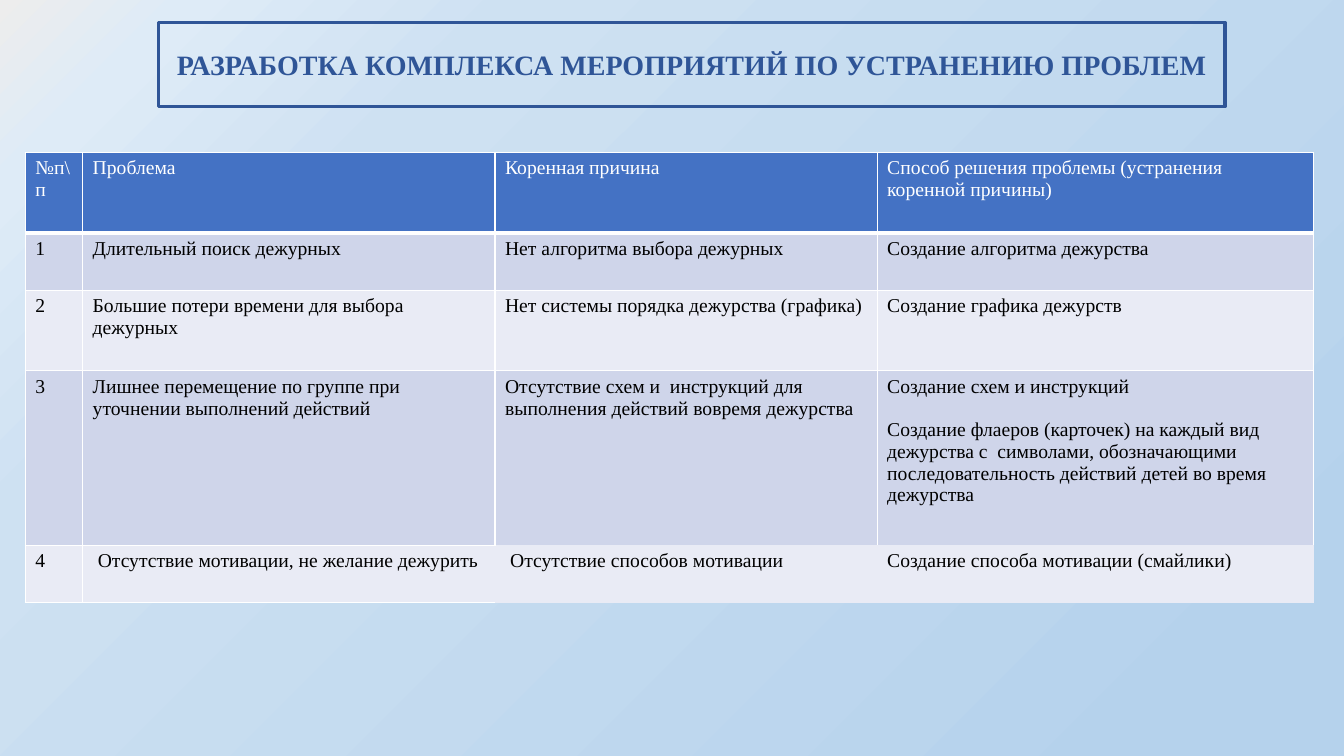
from lxml.etree import SubElement
from pptx import Presentation
from pptx.dml.color import RGBColor
from pptx.enum.text import MSO_ANCHOR, MSO_AUTO_SIZE, PP_ALIGN
from pptx.oxml.ns import qn
from pptx.util import Inches, Pt

FONT = "Times New Roman"
COLORS = {
    "title": "2F5597",
    "header": "4472C4",
    "odd_row": "CFD5EA",
    "even_row": "E9EBF5",
    "white": "FFFFFF",
    "text": "000000",
}
BACKGROUND_STOPS = [(0, "EDEDED"), (9, "DEEBF7"), (25, "CEE1F2"), (91, "B5D2EC")]
COLUMN_WIDTHS = [0.57, 4.09, 3.79, 4.33]
ROW_HEIGHTS = [0.8, 0.57, 0.8, 1.73, 0.57]
MEASURES = [
    ["№п\\п", "Проблема", "Коренная причина",
     "Способ решения проблемы (устранения коренной причины)"],
    ["1", "Длительный поиск дежурных", "Нет алгоритма выбора дежурных",
     "Создание алгоритма дежурства"],
    ["2", "Большие потери времени для выбора дежурных",
     "Нет системы порядка дежурства (графика)", "Создание графика дежурств"],
    ["3", "Лишнее перемещение по группе при уточнении выполнений действий",
     "Отсутствие схем и  инструкций для выполнения действий вовремя дежурства",
     "Создание схем и инструкций\n"
     "Создание флаеров (карточек) на каждый вид дежурства с  символами, обозначающими\n"
     "последовательность действий детей во время дежурства"],
    ["4", "Отсутствие мотивации, не желание дежурить",
     "Отсутствие способов мотивации", "Создание способа мотивации (смайлики)"],
]
BORDERLESS_SIDES = {
    (3, 2): "B", (3, 3): "B", (4, 1): "R", (4, 2): "LRTB", (4, 3): "LRTB",
}
INDENTED_CELLS = {(4, 1), (4, 2)}


def add_text(paragraph, text, size, color, bold=False):
    run = paragraph.add_run()
    run.text = text
    run.font.name = FONT
    run.font.size = Pt(size)
    run.font.bold = bold
    run.font.color.rgb = RGBColor.from_string(color)


def paint_background(slide):
    fill = slide.background.fill
    fill.gradient()
    gradient = slide.background._cSld.find(".//" + qn("a:gradFill"))
    stops = gradient.find(qn("a:gsLst"))
    for stop in list(stops):
        stops.remove(stop)
    for position, color in BACKGROUND_STOPS:
        stop = SubElement(stops, qn("a:gs"), pos=str(position * 1000))
        SubElement(stop, qn("a:srgbClr"), val=color)
    gradient.find(qn("a:lin")).set("ang", str(45 * 60000))


def place_title(slide, left, top, width, height):
    title = slide.shapes.title
    title.left, title.top = Inches(left), Inches(top)
    title.width, title.height = Inches(width), Inches(height)
    title.line.color.rgb = RGBColor.from_string(COLORS["title"])
    title.line.width = Pt(2.25)
    frame = title.text_frame
    frame.word_wrap = True
    frame.auto_size = MSO_AUTO_SIZE.SHAPE_TO_FIT_TEXT
    frame.vertical_anchor = MSO_ANCHOR.MIDDLE
    heading = frame.paragraphs[0]
    heading.alignment = PP_ALIGN.CENTER
    add_text(heading, "РАЗРАБОТКА КОМПЛЕКСА МЕРОПРИЯТИЙ ПО УСТРАНЕНИЮ ПРОБЛЕМ",
             20, COLORS["title"], bold=True)


def set_borders(cell, row, column):
    properties = cell._tc.get_or_add_tcPr()
    for side in "LRTB":
        heavy = (row, side) in ((0, "B"), (1, "T"))
        border = SubElement(properties, qn(f"a:ln{side}"), w=str(Pt(3 if heavy else 1)))
        if side in BORDERLESS_SIDES.get((row, column), ""):
            SubElement(border, qn("a:noFill"))
        else:
            line_fill = SubElement(border, qn("a:solidFill"))
            SubElement(line_fill, qn("a:srgbClr"), val=COLORS["white"])


def fill_cell(cell, row, column, text):
    set_borders(cell, row, column)
    band = "header" if row == 0 else "odd_row" if row % 2 else "even_row"
    cell.fill.solid()
    cell.fill.fore_color.rgb = RGBColor.from_string(COLORS[band])
    if (row, column) in INDENTED_CELLS:
        cell.margin_left = Inches(0.15)
    for index, line in enumerate(text.split("\n")):
        frame = cell.text_frame
        paragraph = frame.add_paragraph() if index else frame.paragraphs[0]
        if index == 1:
            paragraph.space_before = Pt(15.5)
        add_text(paragraph, line, 14, COLORS["text" if row else "white"])


def add_measures_table(slide, left, top, width, height):
    table = slide.shapes.add_table(
        len(ROW_HEIGHTS), len(COLUMN_WIDTHS),
        Inches(left), Inches(top), Inches(width), Inches(height)).table
    for column, share in zip(table.columns, COLUMN_WIDTHS):
        column.width = Inches(width * share / sum(COLUMN_WIDTHS))
    for row, share in zip(table.rows, ROW_HEIGHTS):
        row.height = Inches(height * share / sum(ROW_HEIGHTS))
    for row, texts in enumerate(MEASURES):
        for column, text in enumerate(texts):
            fill_cell(table.cell(row, column), row, column, text)


def main():
    presentation = Presentation()
    presentation.slide_width = Inches(13.33)
    presentation.slide_height = Inches(7.5)
    slide = presentation.slides.add_slide(presentation.slide_layouts[5])
    paint_background(slide)
    place_title(slide, 1.57, 0.42, 10.58, 0.44)
    add_measures_table(slide, 0.25, 1.51, 12.78, 4.47)
    presentation.save("out.pptx")


if __name__ == "__main__":
    main()
